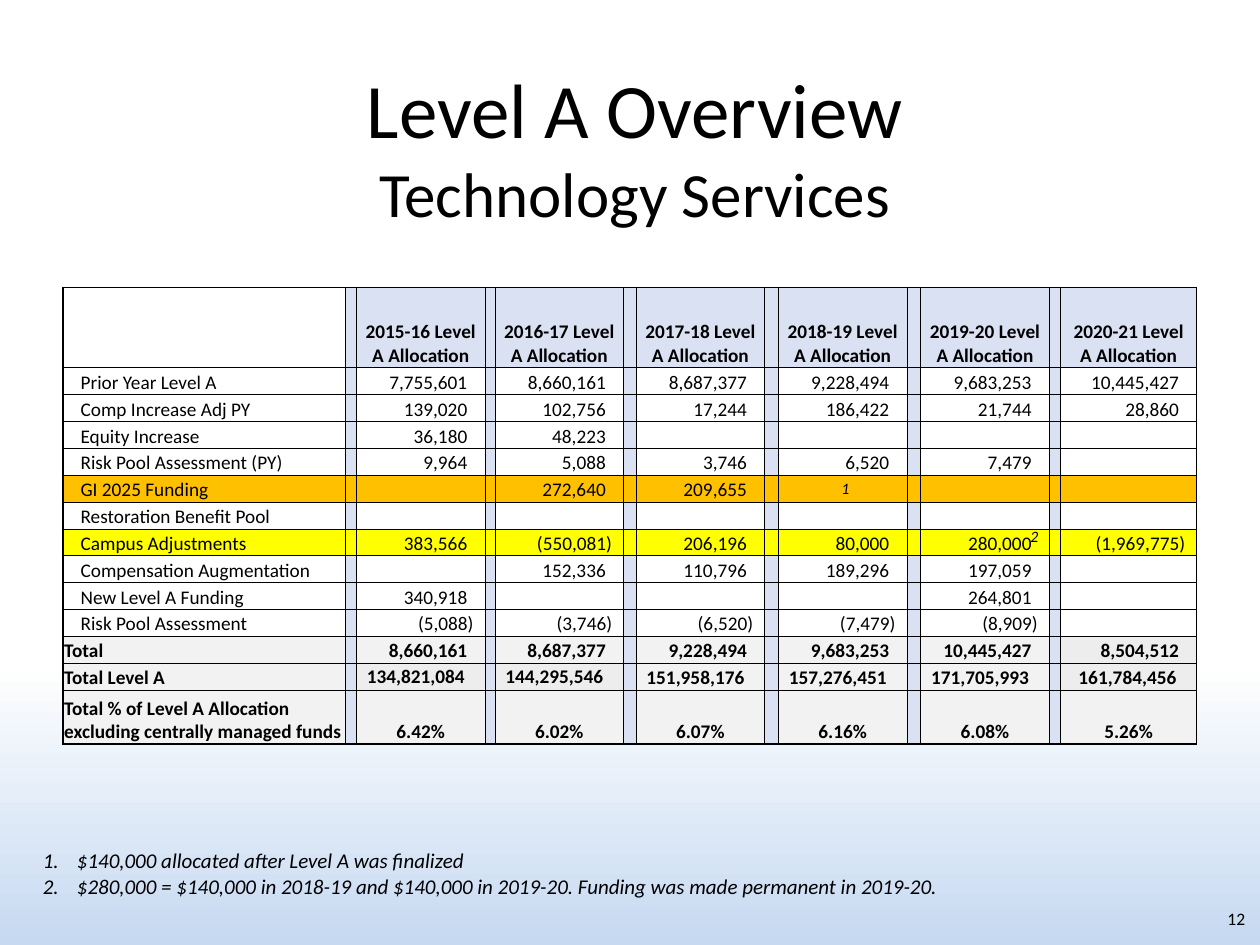
from dataclasses import dataclass

from lxml.etree import SubElement
from pptx import Presentation
from pptx.dml.color import RGBColor as RGB
from pptx.enum.text import MSO_ANCHOR as ANCHOR, MSO_AUTO_SIZE as AUTO, PP_ALIGN as ALIGN
from pptx.oxml.ns import qn
from pptx.util import Inches, Pt


@dataclass(frozen=True)
class Theme:
    font: str = "Calibri"
    ink: str = "000000"
    white: str = "FFFFFF"
    sky: str = "C6D9F1"
    header: str = "D9E1F2"
    orange: str = "FFC000"
    yellow: str = "FFFF00"
    total: str = "F2F2F2"
    total_dark: str = "EDEDED"
    title: int = 44
    subtitle: int = 36
    notes: int = 12
    table: int = 11
    small: int = 10
    marker: int = 9
    thin: float = 0.5
    thick: float = 1


theme = Theme()
deck = Presentation()
deck.slide_width, deck.slide_height = Inches(10), Inches(7.5)
UNIT = deck.slide_width / 100  # the slide is a grid of 100 columns by 75 rows


def grid(*cells):
    return [round(cell * UNIT) for cell in cells]


def write(paragraph, text, size, bold=False, italic=False):
    run = paragraph.add_run()
    run.text = text
    run.font.name, run.font.size = theme.font, Pt(size)
    run.font.bold, run.font.italic = bold, italic
    run.font.color.rgb = RGB.from_string(theme.ink)


slide = deck.slides.add_slide(deck.slide_layouts[1])
title, notes = slide.placeholders

# Background: white fading to light blue at the foot
backdrop = slide.background.fill
backdrop.gradient()
backdrop.gradient_angle = 270
for stop, color, position in zip(backdrop.gradient_stops, (theme.white, theme.sky), (0.7, 1)):
    stop.color.rgb, stop.position = RGB.from_string(color), position

# Title
title.left, title.top, title.width, title.height = grid(3.3, 4.2, 94.2, 8.3)
heading = title.text_frame
heading.auto_size, heading.vertical_anchor = AUTO.NONE, ANCHOR.TOP
heading.margin_top = grid(0.7)[0]
line = heading.paragraphs[0]
line.alignment = ALIGN.CENTER
write(line, "Level A Overview", theme.title)
line.add_line_break()
write(line, "Technology Services", theme.subtitle)

# Numbered footnotes
notes.left, notes.top, notes.width, notes.height = grid(2.4, 66.8, 86.1, 7.1)
notes.text_frame.auto_size = AUTO.NONE
hanging = grid(2.7)[0]
for index, note in enumerate((
    "$140,000 allocated after Level A was finalized",
    "$280,000 = $140,000 in 2018-19 and $140,000 in 2019-20. Funding was made permanent in 2019-20.",
)):
    line = notes.text_frame.paragraphs[0] if index == 0 else notes.text_frame.add_paragraph()
    line.space_before = Pt(0)
    write(line, note, theme.notes, italic=True)
    props = line._p.get_or_add_pPr()
    props.set("marL", str(hanging))
    props.set("indent", str(-hanging))
    SubElement(props, qn("a:buFont"), typeface=theme.font)
    SubElement(props, qn("a:buAutoNum"), type="arabicPeriod")

# Allocation figures: label, then one value per year
years = ["2015-16", "2016-17", "2017-18", "2018-19", "2019-20", "2020-21"]
allocations = [
    ["", *(f"{year} Level A Allocation" for year in years)],
    ["Prior Year Level A", "7,755,601", "8,660,161", "8,687,377", "9,228,494", "9,683,253", "10,445,427"],
    ["Comp Increase Adj PY", "139,020", "102,756", "17,244", "186,422", "21,744", "28,860"],
    ["Equity Increase", "36,180", "48,223", "", "", "", ""],
    ["Risk Pool Assessment (PY)", "9,964", "5,088", "3,746", "6,520", "7,479", ""],
    ["GI 2025 Funding", "", "272,640", "209,655", "", "", ""],
    ["Restoration Benefit Pool", "", "", "", "", "", ""],
    ["Campus Adjustments", "383,566", "(550,081)", "206,196", "80,000", "280,000", "(1,969,775)"],
    ["Compensation Augmentation", "", "152,336", "110,796", "189,296", "197,059", ""],
    ["New Level A Funding", "340,918", "", "", "", "264,801", ""],
    ["Risk Pool Assessment", "(5,088)", "(3,746)", "(6,520)", "(7,479)", "(8,909)", ""],
    ["Total", "8,660,161", "8,687,377", "9,228,494", "9,683,253", "10,445,427", "8,504,512"],
    ["Total Level A", "134,821,084", "144,295,546", "151,958,176", "157,276,451", "171,705,993", "161,784,456"],
    ["Total % of Level A Allocation excluding centrally managed funds",
     "6.42%", "6.02%", "6.07%", "6.16%", "6.08%", "5.26%"],
]
highlights = {5: theme.orange, 7: theme.yellow}
darker_totals = {(11, 12), (12, 2), (12, 4), (12, 12)}
raised = {(12, 2), (12, 4)}
first_total, last_row, last_col = 11, len(allocations) - 1, 2 * len(years)

# Table frame: narrow gutters stand before each year
table = slide.shapes.add_table(last_row + 1, last_col + 1, *grid(5, 22.8, 90, 36.3)).table
table.first_row = table.horz_banding = False
gutters = [0.9, 0.8, 1, 1.1, 1.1, 0.9]
year_widths = [10.2] * 5 + [10.8]
widths = [22.4] + [width for pair in zip(gutters, year_widths) for width in pair]
heights = [6.4] + [(36.3 - 6.4 - 4.3) / 12] * 12 + [4.3]
for column, width in zip(table.columns, grid(*widths)):
    column.width = width
for row, height in zip(table.rows, grid(*heights)):
    row.height = height

# Table cells
for r, figures in enumerate(allocations):
    for c in range(last_col + 1):
        cell = table.cell(r, c)
        is_label, is_gutter = c == 0, c % 2 == 1
        is_header, is_total = r == 0, r >= first_total
        text = "" if is_gutter else figures[c // 2]

        # Borders: thick around the outside, thin within
        outer = {"L": c == 0, "R": c == last_col, "T": r == 0, "B": r == last_row}
        for side, on_edge in outer.items():
            weight = theme.thick if on_edge else theme.thin
            border = SubElement(cell._tc.get_or_add_tcPr(), qn(f"a:ln{side}"), w=str(Pt(weight)))
            SubElement(SubElement(border, qn("a:solidFill")), qn("a:srgbClr"), val=theme.ink)

        # Fill
        if r in highlights:
            color = highlights[r]
        elif is_gutter or (is_header and not is_label):
            color = theme.header
        elif is_total:
            color = theme.total_dark if (r, c) in darker_totals else theme.total
        else:
            color = None
        if color:
            cell.fill.solid()
            cell.fill.fore_color.rgb = RGB.from_string(color)
        else:
            cell.fill.background()

        # Text: labels left, headings and shares centred, amounts right
        left = right = 0.1
        line = cell.text_frame.paragraphs[0]
        if is_label:
            left = 0.1 if is_total else 1.4
        elif is_header and text:
            left = right = 0.5 if c < last_col else 0.8
            line.alignment = ALIGN.CENTER
        elif r == last_row:
            line.alignment = ALIGN.CENTER
        elif text:
            right = 0.9 if text.endswith(")") else 1.6 if r == 12 else 1.4
            line.alignment = ALIGN.RIGHT
        cell.margin_left, cell.margin_right, cell.margin_top, cell.margin_bottom = grid(left, right, 0.1, 0)
        cell.vertical_anchor = ANCHOR.MIDDLE if (r, c) in raised else ANCHOR.BOTTOM
        if text:
            write(line, text, theme.table, bold=is_header or is_total)
        else:
            SubElement(line._p, qn("a:endParaRPr"), sz=str(theme.table * 100))

# Page number and footnote markers
for text, place, size, italic, align in (
    ("12", (76.5, 71.6, 23.3, 4), theme.small, False, ALIGN.RIGHT),
    ("1", (65.8, 37.5, 3.3, 2.5), theme.marker, True, ALIGN.LEFT),
    ("2", (80.8, 41.3, 3.3, 2.5), theme.marker, True, ALIGN.LEFT),
):
    label = slide.shapes.add_textbox(*grid(*place)).text_frame
    label.word_wrap = True
    label.paragraphs[0].alignment = align
    write(label.paragraphs[0], text, size, italic=italic)

deck.save("out.pptx")
